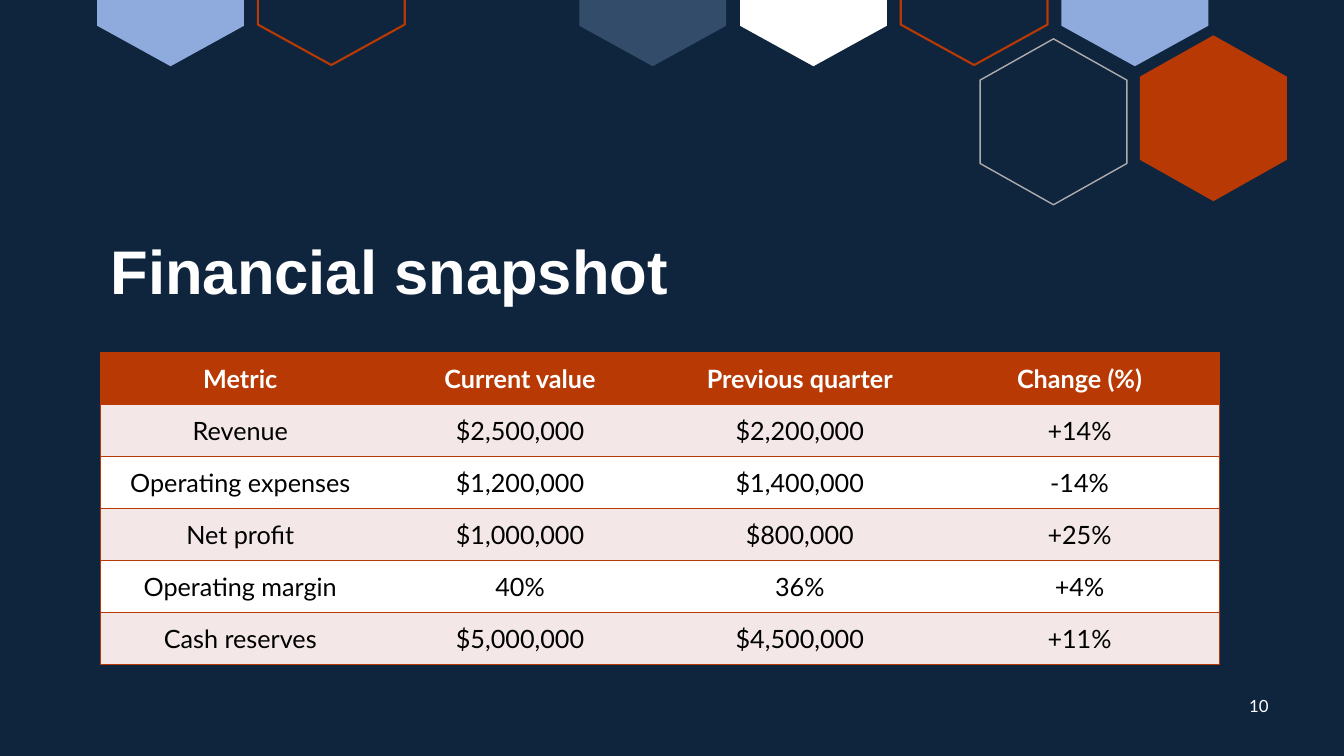
import pptx
import pptx.dml.color
import pptx.enum.text
import pptx.oxml
import pptx.oxml.ns
import pptx.util
from pptx.util import Cm

NAVY, RUST, SKY, SLATE = "0F253E", "B83903", "8FAADC", "334C6A"
WHITE, BLACK, GREY, BLUSH = "FFFFFF", "000000", "AFABAB", "F3E8E7"

# Hexagon measures in centimetres
HEXAGON_WIDTH, HEXAGON_HEIGHT, SHOULDER = 3.7, 4.18, 1.04
CUT_SHOULDER, CUT_HEIGHT = 0.65, 1.67
ROW_LEFT, ROW_PITCH = 2.45, 4.05

METRICS = [
    ["Metric", "Current value", "Previous quarter", "Change (%)"],
    ["Revenue", "$2,500,000", "$2,200,000", "+14%"],
    ["Operating expenses", "$1,200,000", "$1,400,000", "-14%"],
    ["Net profit", "$1,000,000", "$800,000", "+25%"],
    ["Operating margin", "40%", "36%", "+4%"],
    ["Cash reserves", "$5,000,000", "$4,500,000", "+11%"],
]


def color(hex_value):
    return pptx.dml.color.RGBColor.from_string(hex_value)


def set_font(paragraph, name, size, hex_value, bold=False):
    paragraph.font.name = name
    paragraph.font.size = pptx.util.Pt(size)
    paragraph.font.color.rgb = color(hex_value)
    paragraph.font.bold = bold


def add_outline(slide, left, top, points, fill=None, line=None, line_width=1.0):
    """Draw a closed polygon; points are centimetres from left and top."""
    corners = [(Cm(left + x), Cm(top + y)) for x, y in points]
    builder = slide.shapes.build_freeform(*corners[0], scale=1.0)
    builder.add_line_segments(corners[1:], close=True)
    shape = builder.convert_to_shape()
    shape.shadow.inherit = False
    if fill:
        shape.fill.solid()
        shape.fill.fore_color.rgb = color(fill)
    else:
        shape.fill.background()
    if line:
        shape.line.color.rgb = color(line)
        shape.line.width = pptx.util.Pt(line_width)
    else:
        shape.line.fill.background()


def add_hexagon(slide, left, top, **style):
    low = HEXAGON_HEIGHT - SHOULDER
    middle = HEXAGON_WIDTH / 2
    points = [(middle, 0), (HEXAGON_WIDTH, SHOULDER), (HEXAGON_WIDTH, low),
              (middle, HEXAGON_HEIGHT), (0, low), (0, SHOULDER)]
    add_outline(slide, left, top, points, **style)


def add_cut_hexagon(slide, column, top=0, **style):
    """Draw a hexagon cut off by the slide's top edge."""
    points = [(0, 0), (HEXAGON_WIDTH, 0), (HEXAGON_WIDTH, CUT_SHOULDER),
              (HEXAGON_WIDTH / 2, CUT_HEIGHT), (0, CUT_SHOULDER)]
    add_outline(slide, ROW_LEFT + column * ROW_PITCH, top, points, **style)


def add_text(slide, text, left, top, width, height, anchor):
    box = slide.shapes.add_textbox(Cm(left), Cm(top), Cm(width), Cm(height))
    frame = box.text_frame
    frame.word_wrap = True
    frame.vertical_anchor = anchor
    frame.text = text
    return frame.paragraphs[0]


def set_border(cell, side, hex_value=None):
    namespace = pptx.oxml.ns.nsdecls("a")
    paint = (f'<a:solidFill><a:srgbClr val="{hex_value}"/></a:solidFill>'
             if hex_value else "<a:noFill/>")
    cell._tc.get_or_add_tcPr().append(pptx.oxml.parse_xml(
        f'<a:ln{side} {namespace} w="12700">{paint}</a:ln{side}>'))


def add_metrics_table(slide, left, top, column_width, row_height):
    row_count, column_count = len(METRICS), len(METRICS[0])
    table = slide.shapes.add_table(
        row_count, column_count, Cm(left), Cm(top),
        Cm(column_width * column_count), Cm(row_height * row_count)).table
    for column in table.columns:
        column.width = Cm(column_width)
    for row_index, values in enumerate(METRICS):
        table.rows[row_index].height = Cm(row_height)
        is_header = row_index == 0
        fill = RUST if is_header else (BLUSH if row_index % 2 else WHITE)
        for column_index, value in enumerate(values):
            cell = table.cell(row_index, column_index)
            set_border(cell, "L", RUST if column_index == 0 else None)
            set_border(cell, "R", RUST if column_index == column_count - 1 else None)
            set_border(cell, "T", RUST)
            set_border(cell, "B", RUST)
            cell.fill.solid()
            cell.fill.fore_color.rgb = color(fill)
            cell.vertical_anchor = pptx.enum.text.MSO_ANCHOR.MIDDLE
            cell.text = value
            paragraph = cell.text_frame.paragraphs[0]
            paragraph.alignment = pptx.enum.text.PP_ALIGN.CENTER
            set_font(paragraph, "Lato", 18, WHITE if is_header else BLACK, is_header)


def main():
    presentation = pptx.Presentation()
    presentation.slide_width = Cm(33.87)
    presentation.slide_height = Cm(19.05)
    slide = presentation.slides.add_slide(presentation.slide_layouts[6])
    slide.background.fill.solid()
    slide.background.fill.fore_color.rgb = color(NAVY)

    # Hexagon decoration
    add_hexagon(slide, 24.7, 0.98, line=GREY)
    add_cut_hexagon(slide, 3, fill=SLATE)
    add_cut_hexagon(slide, 4, fill=WHITE)
    for column in (0, 6):
        add_cut_hexagon(slide, column, fill=SKY)
    for column in (1, 5):
        add_cut_hexagon(slide, column, top=-0.03, line=RUST, line_width=1.5)
    add_hexagon(slide, 28.73, 0.89, fill=RUST)

    # Title
    title = add_text(slide, "Financial snapshot", 2.54, 2.03, 21.31, 5.84,
                     pptx.enum.text.MSO_ANCHOR.BOTTOM)
    title.line_spacing = 0.9
    set_font(title, "Arial", 44, WHITE, bold=True)

    # Financial table
    add_metrics_table(slide, 2.53, 8.88, 7.05, 1.31)

    # Slide number
    number = add_text(slide, "10", 31.09, 17.27, 1.27, 1.02,
                      pptx.enum.text.MSO_ANCHOR.MIDDLE)
    number.alignment = pptx.enum.text.PP_ALIGN.CENTER
    set_font(number, "Lato", 12, WHITE)

    presentation.save("out.pptx")


if __name__ == "__main__":
    main()
